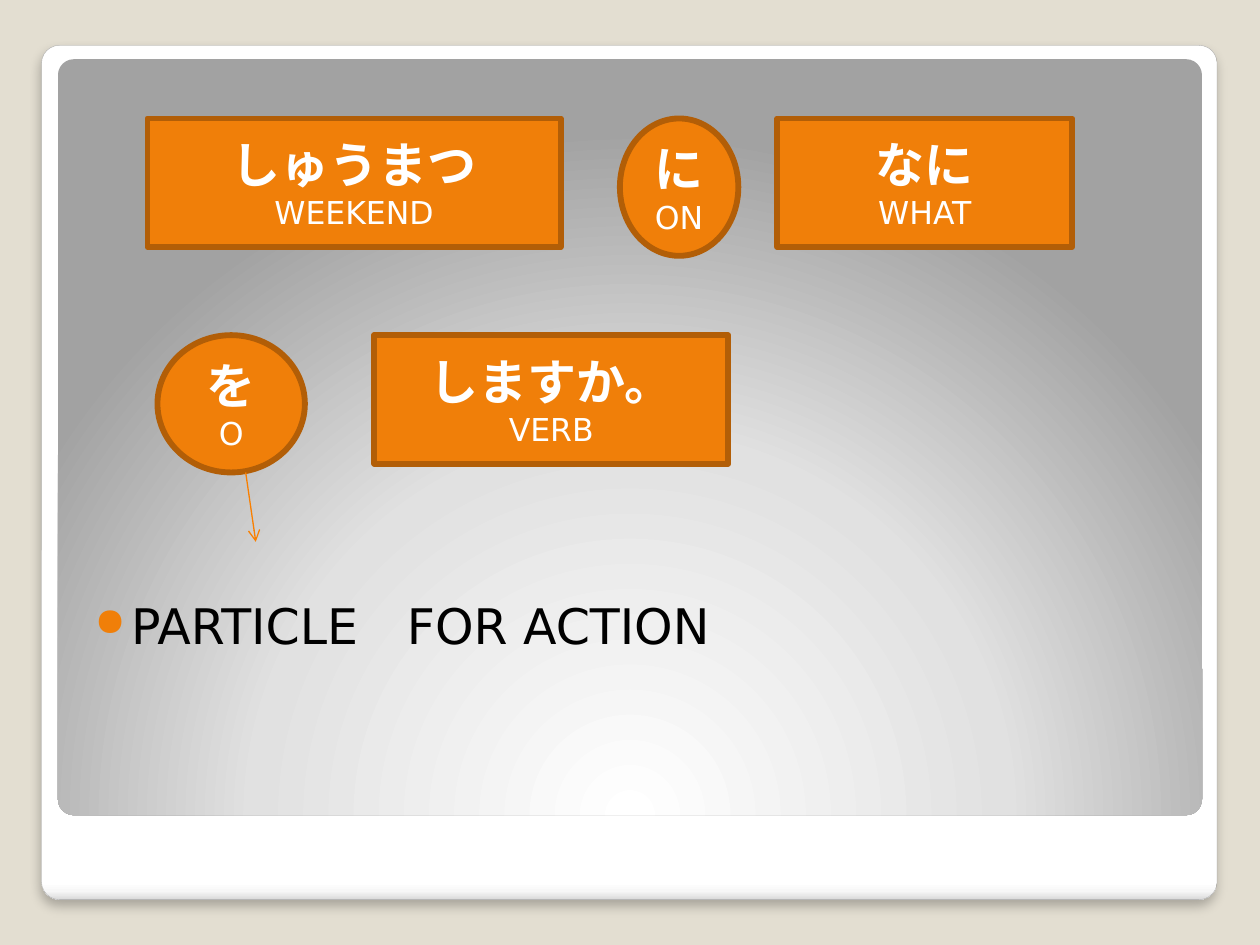
from lxml import etree
from pptx import Presentation
from pptx.dml.color import RGBColor
from pptx.enum.shapes import MSO_CONNECTOR, MSO_SHAPE
from pptx.enum.text import MSO_ANCHOR, PP_ALIGN
from pptx.oxml import parse_xml
from pptx.oxml.ns import nsdecls, qn
from pptx.util import Inches, Pt

RECT, OVAL, ROUND = MSO_SHAPE.RECTANGLE, MSO_SHAPE.OVAL, MSO_SHAPE.ROUNDED_RECTANGLE
STRAIGHT = MSO_CONNECTOR.STRAIGHT
MIDDLE, BOTTOM = MSO_ANCHOR.MIDDLE, MSO_ANCHOR.BOTTOM
CENTER = PP_ALIGN.CENTER

BACKGROUND = RGBColor(0xE3, 0xDE, 0xD1)
ORANGE = RGBColor(0xF0, 0x7F, 0x09)
DARK_ORANGE = RGBColor(0xB2, 0x5E, 0x07)
ARROW_ORANGE = RGBColor(0xF9, 0x7F, 0x00)
GRAY = RGBColor(0xA4, 0xA4, 0xA4)
WHITE = RGBColor(0xFF, 0xFF, 0xFF)
BLACK = RGBColor(0x00, 0x00, 0x00)

LINEAR_DOWN = '<a:lin ang="5400000" scaled="0"/>'
RADIAL_FROM_BELOW = ('<a:path path="circle"><a:fillToRect l="50000" t="175000" '
                     'r="50000" b="-75000"/></a:path>')


def add_text(p, text, size=28, color=WHITE, bold=False, font="DejaVu Sans"):
    r = p.add_run()
    r.text = text
    r.font.name, r.font.size, r.font.bold = font, Pt(size), bold
    r.font.color.rgb = color


class SlideBuilder:
    def __init__(self, slide):
        self.s = slide
        fill = slide.background.fill
        fill.solid()
        fill.fore_color.rgb = BACKGROUND

    def shape(self, kind, x, y, w, h):
        sp = self.s.shapes.add_shape(kind, Inches(x), Inches(y), Inches(w), Inches(h))
        sp.shadow.inherit = False
        return sp

    def panel(self, x, y, w, h, stops, direction, border=None, shadow=False):
        """Slightly rounded panel with a gradient fill."""
        sp = self.shape(ROUND, x, y, w, h)
        sp.adjustments[0] = 0.021
        if border is None:
            sp.line.fill.background()
        else:
            sp.line.color.rgb, sp.line.width = border, Pt(0.16)
        gs = "".join(f'<a:gs pos="{pos * 1000}"><a:srgbClr val="{color}"/></a:gs>'
                     for pos, color in stops)
        grad = parse_xml(f'<a:gradFill {nsdecls("a")} rotWithShape="1">'
                         f'<a:gsLst>{gs}</a:gsLst>{direction}</a:gradFill>')
        spPr = sp._element.spPr
        spPr.find(qn("a:prstGeom")).addnext(grad)
        if shadow:
            spPr.find(qn("a:effectLst")).append(parse_xml(
                f'<a:outerShdw {nsdecls("a")} blurRad="{Pt(6)}" dist="{Pt(4)}" '
                'dir="5400000" algn="t" rotWithShape="0"><a:srgbClr val="000000">'
                '<a:alpha val="25000"/></a:srgbClr></a:outerShdw>'))

    def word(self, kind, x, y, w, h, japanese, english):
        """Orange shape with a Japanese word above its English meaning."""
        sp = self.shape(kind, x, y, w, h)
        sp.fill.solid()
        sp.fill.fore_color.rgb = ORANGE
        sp.line.color.rgb, sp.line.width = DARK_ORANGE, Pt(3.35)
        tf = sp.text_frame
        tf.word_wrap, tf.vertical_anchor = True, MIDDLE
        add_text(tf.paragraphs[0], japanese, bold=True)
        add_text(tf.add_paragraph(), english, size=18)
        for p in tf.paragraphs:
            p.alignment = CENTER

    def bullet(self, x, y, w, h, text):
        tf = self.s.shapes.add_textbox(Inches(x), Inches(y), Inches(w), Inches(h)).text_frame
        tf.word_wrap, tf.vertical_anchor = True, BOTTOM
        tf.margin_left = Inches(0.2)
        p = tf.paragraphs[0]
        add_text(p, text, color=BLACK)
        pPr = p._p.get_or_add_pPr()
        pPr.set("marL", str(Inches(0.29)))
        pPr.set("indent", str(-Inches(0.29)))
        color = etree.SubElement(pPr, qn("a:buClr"))
        etree.SubElement(color, qn("a:srgbClr"), val=str(ORANGE))
        etree.SubElement(pPr, qn("a:buSzPct"), val="80000")
        etree.SubElement(pPr, qn("a:buChar"), char="●")

    def arrow(self, x1, y1, x2, y2):
        c = self.s.shapes.add_connector(STRAIGHT, Inches(x1), Inches(y1),
                                        Inches(x2), Inches(y2))
        c.line.color.rgb, c.line.width = ARROW_ORANGE, Pt(0.75)
        etree.SubElement(c.line._get_or_add_ln(), qn("a:tailEnd"), type="arrow")
        etree.SubElement(c._element.spPr, qn("a:effectLst"))


def main():
    prs = Presentation()
    prs.slide_width, prs.slide_height = Inches(10), Inches(7.5)
    b = SlideBuilder(prs.slides.add_slide(prs.slide_layouts[6]))

    # White card and gray panel
    b.panel(0.33, 0.36, 9.33, 6.78,
            [(0, WHITE), (98, WHITE), (99, "F7F7F7"), (100, "DADADA")],
            LINEAR_DOWN, border=GRAY, shadow=True)
    b.panel(0.46, 0.47, 9.08, 6, [(0, WHITE), (55, "E1E1E1"), (100, "A2A2A2")],
            RADIAL_FROM_BELOW)

    # Explanation of the particle
    b.bullet(0.55, 0.58, 8.95, 4.66, "PARTICLE\u3000FOR ACTION".replace("\u3000", "　"))

    # Sentence in two rows: words in rectangles, particles in ovals
    rows = [
        (0.94, [(RECT, 1.17, 3.28, "しゅうまつ", "WEEKEND"),
                (OVAL, 4.92, 0.94, "に", "ON"),
                (RECT, 6.17, 2.34, "なに", "WHAT")]),
        (2.66, [(OVAL, 1.25, 1.17, "を", "O"),
                (RECT, 2.97, 2.81, "しますか。", "VERB")]),
    ]
    heights = {RECT: 1.02, OVAL: 1.09}
    for y, words in rows:
        for kind, x, w, japanese, english in words:
            b.word(kind, x, y, w, heights[kind], japanese, english)

    # Arrow from the particle to its explanation
    b.arrow(1.95, 3.75, 2.03, 4.3)

    prs.save("out.pptx")


if __name__ == "__main__":
    main()
